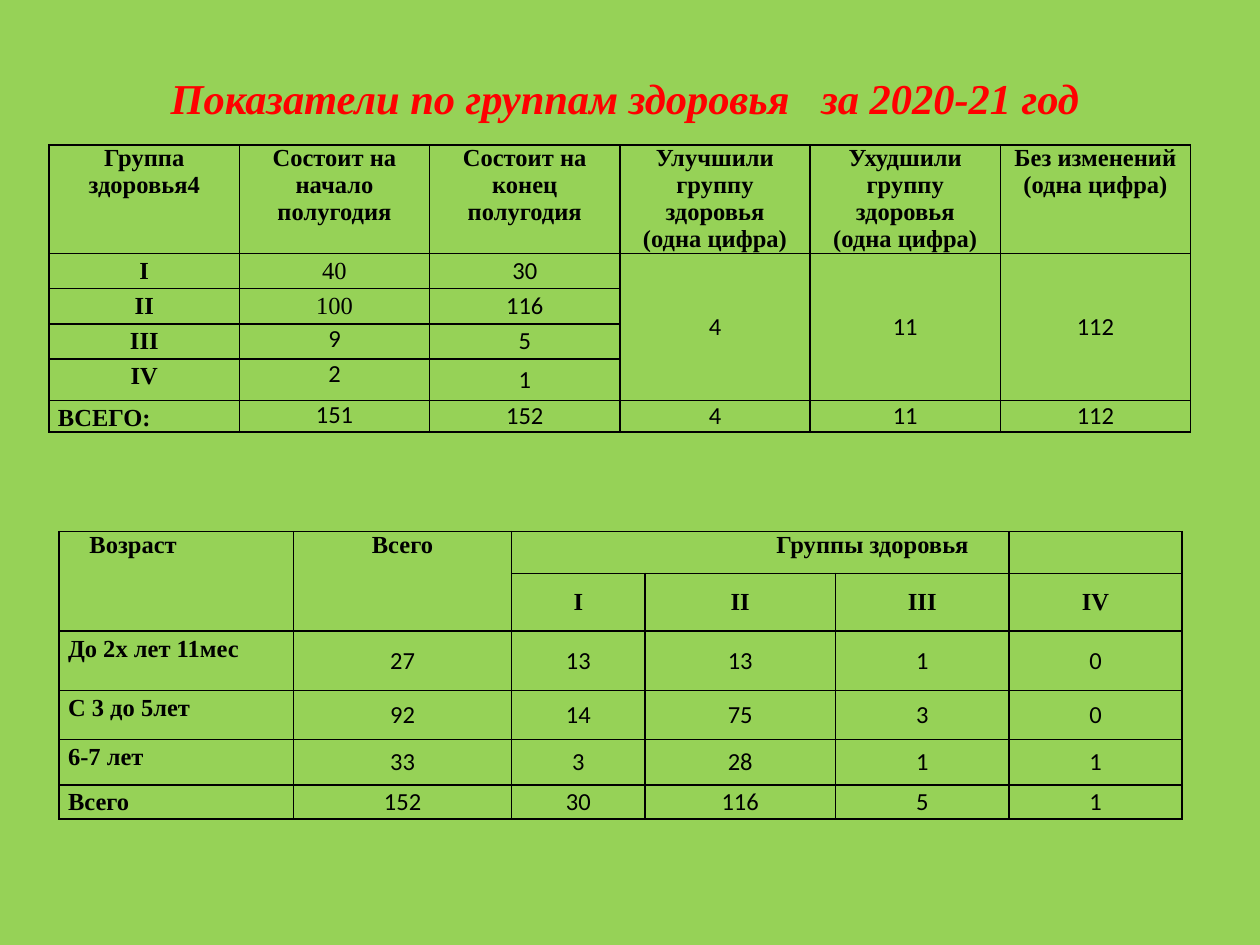
from pptx import Presentation
from pptx.dml.color import RGBColor
from pptx.enum.text import MSO_ANCHOR, PP_ALIGN
from pptx.oxml import parse_xml
from pptx.oxml.ns import nsdecls
from pptx.util import Inches, Pt

GREEN = RGBColor(0x96, 0xD2, 0x57)
RED = RGBColor(0xFF, 0x00, 0x00)
BLACK = RGBColor(0x00, 0x00, 0x00)
SERIF = "Times New Roman"
SANS = "Calibri"

HEADING = dict(font=SERIF, bold=True)
CENTRED_HEADING = dict(HEADING, anchor=MSO_ANCHOR.MIDDLE)
GROUP_LABEL = dict(HEADING, line_spacing=1.15)
ROW_LABEL = dict(GROUP_LABEL, align=PP_ALIGN.LEFT)
NUMBER = dict(font=SANS, anchor=MSO_ANCHOR.MIDDLE, side=0.01)
TOP_NUMBER = dict(font=SANS)
SERIF_NUMBER = dict(font=SERIF, line_spacing=1.15)


def write_text(text_frame, text, font=SERIF, size=14, color=BLACK, bold=False,
               italic=False, align=PP_ALIGN.CENTER, line_spacing=None):
    for index, line in enumerate(text.split("\n")):
        paragraph = text_frame.add_paragraph() if index else text_frame.paragraphs[0]
        paragraph.alignment = align
        if line_spacing:
            paragraph.line_spacing = line_spacing
        run = paragraph.add_run()
        run.text = line
        run.font.name = font
        run.font.size = Pt(size)
        run.font.bold = bold
        run.font.italic = italic
        run.font.color.rgb = color


def write_cell(cell, text, anchor=MSO_ANCHOR.TOP, side=0.07, left=None, **text_format):
    cell.vertical_anchor = anchor
    cell.margin_left = Inches(side if left is None else left)
    cell.margin_right = Inches(side)
    write_text(cell.text_frame, text, **text_format)


def outline_cell(cell):
    properties = cell._tc.get_or_add_tcPr()
    for edge in ("lnL", "lnR", "lnT", "lnB"):
        properties.append(parse_xml(
            f'<a:{edge} {nsdecls("a")} w="{Pt(1)}"><a:solidFill>'
            f'<a:srgbClr val="{BLACK}"/></a:solidFill></a:{edge}>'))


def add_grid(slide, left, top, widths, heights):
    table = slide.shapes.add_table(
        len(heights), len(widths), Inches(left), Inches(top),
        Inches(sum(widths)), Inches(sum(heights))).table
    table.first_row = False
    table.horz_banding = False
    for column, width in zip(table.columns, widths):
        column.width = Inches(width)
    for row, height in zip(table.rows, heights):
        row.height = Inches(height)
    for cell in table.iter_cells():
        outline_cell(cell)
        cell.fill.background()
        cell.margin_top = cell.margin_bottom = Inches(0)
    return table


def add_title(slide, left, top, width, height):
    title = slide.shapes.title
    title.left, title.top = Inches(left), Inches(top)
    title.width, title.height = Inches(width), Inches(height)
    title.text_frame.vertical_anchor = MSO_ANCHOR.MIDDLE
    title.text_frame.word_wrap = True
    style = dict(size=24.3, color=RED, bold=True, italic=True)
    for text in ("Показатели по группам здоровья", " ", "за 2020-21 год"):
        write_text(title.text_frame, text, **style)
    gap = title.text_frame.paragraphs[0].runs[1]
    gap._r.get_or_add_rPr().set("spc", "1200")


def add_group_table(slide, left, top, width):
    table = add_grid(slide, left, top, [width / 6] * 6,
                     [0.85, 0.28, 0.28, 0.28, 0.33, 0.25])
    headings = ["Группа\nздоровья4", "Состоит на начало полугодия",
                "Состоит на конец полугодия",
                "Улучшили группу здоровья\n(одна цифра)",
                "Ухудшили группу здоровья\n(одна цифра)",
                "Без изменений\n(одна цифра)"]
    for column, heading in enumerate(headings):
        write_cell(table.cell(0, column), heading, **HEADING)

    rows = [("I", "40", "30", GROUP_LABEL, SERIF_NUMBER),
            ("II", "100", "116", GROUP_LABEL, SERIF_NUMBER),
            ("III", "9", "5", GROUP_LABEL, TOP_NUMBER),
            ("IV", "2", "1", GROUP_LABEL, TOP_NUMBER),
            ("ВСЕГО:", "151", "152", ROW_LABEL, TOP_NUMBER)]
    for row, (label, start, end, label_style, start_style) in enumerate(rows, 1):
        write_cell(table.cell(row, 0), label, **label_style)
        write_cell(table.cell(row, 1), start, **start_style)
        write_cell(table.cell(row, 2), end, **NUMBER)

    for column, change in enumerate(["4", "11", "112"], 3):
        table.cell(1, column).merge(table.cell(4, column))
        for row in (1, 5):
            write_cell(table.cell(row, column), change, **NUMBER)


def add_age_table(slide, left, top):
    table = add_grid(slide, left, top, [1.86, 1.73, 1.06, 1.51, 1.38, 1.37],
                     [0.33, 0.46, 0.47, 0.39, 0.36, 0.27])
    for column in (0, 1):
        table.cell(0, column).merge(table.cell(1, column))
    table.cell(0, 2).merge(table.cell(0, 4))
    write_cell(table.cell(0, 0), "Возраст", left=0.24, align=PP_ALIGN.LEFT, **HEADING)
    write_cell(table.cell(0, 1), "Всего", **HEADING)
    write_cell(table.cell(0, 2), "Группы здоровья", left=1.85, **HEADING)
    for column, group in enumerate(["I", "II", "III", "IV"], 2):
        write_cell(table.cell(1, column), group, **CENTRED_HEADING)

    rows = [("До 2х лет 11мес", 27, 13, 13, 1, 0),
            ("С 3 до 5лет", 92, 14, 75, 3, 0),
            ("6-7 лет", 33, 3, 28, 1, 1),
            ("Всего", 152, 30, 116, 5, 1)]
    for row, (label, *counts) in enumerate(rows, 2):
        write_cell(table.cell(row, 0), label, **ROW_LABEL)
        for column, count in enumerate(counts, 1):
            write_cell(table.cell(row, column), str(count), **NUMBER)


def main():
    presentation = Presentation()
    presentation.slide_width = Inches(10)
    presentation.slide_height = Inches(7.5)
    slide = presentation.slides.add_slide(presentation.slide_layouts[5])
    slide.background.fill.solid()
    slide.background.fill.fore_color.rgb = GREEN
    add_title(slide, 0.46, 0.3, 9, 0.95)
    add_group_table(slide, 0.39, 1.15, 9.06)
    add_age_table(slide, 0.47, 4.22)
    presentation.save("out.pptx")


if __name__ == "__main__":
    main()
